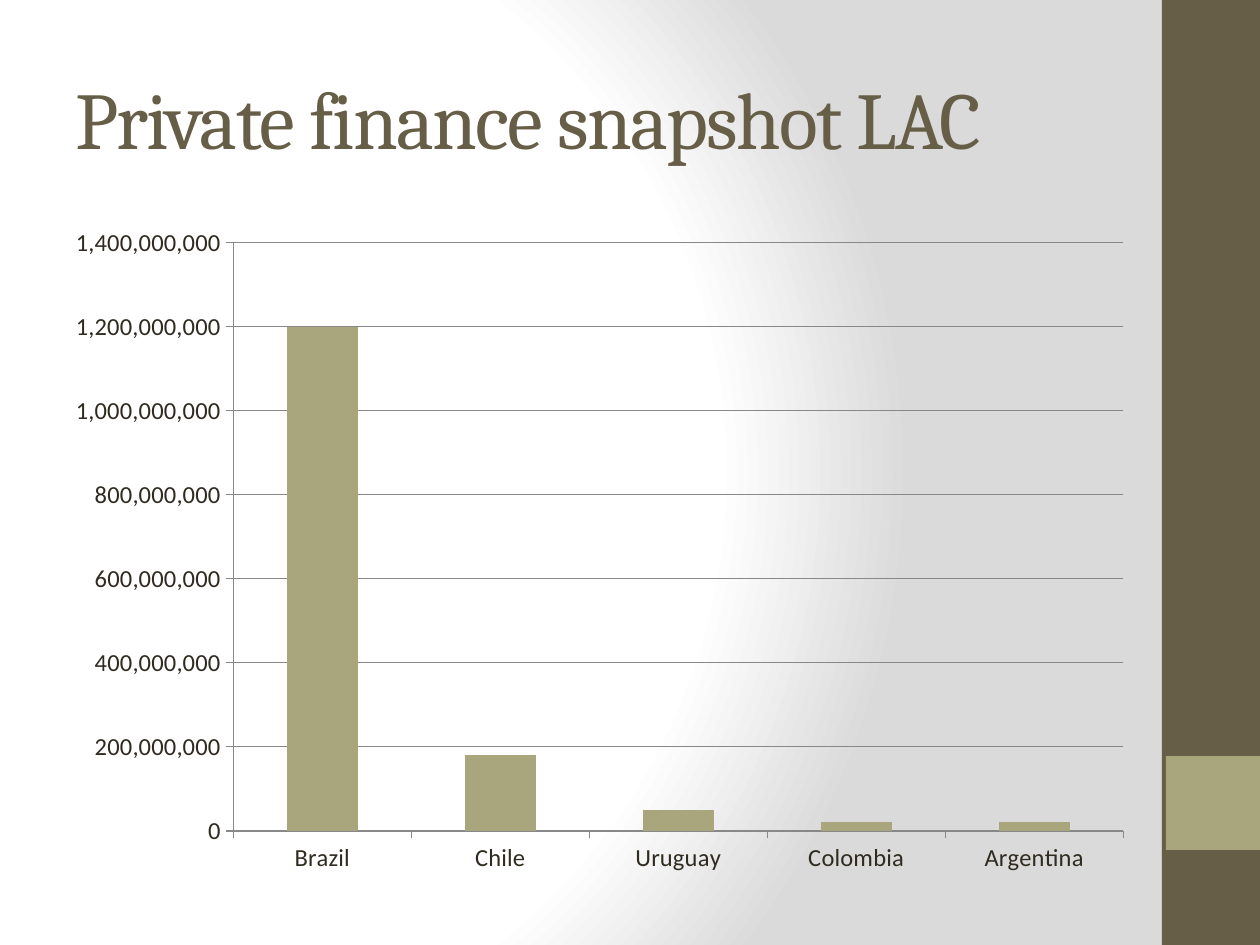
from dataclasses import dataclass

from lxml.etree import SubElement
from pptx import Presentation
from pptx.chart.data import CategoryChartData
from pptx.dml.color import RGBColor
from pptx.enum.chart import XL_CHART_TYPE as ChartType, XL_TICK_MARK as TickMark
from pptx.enum.shapes import MSO_SHAPE as Shape
from pptx.enum.text import MSO_ANCHOR as Anchor
from pptx.oxml.ns import qn
from pptx.util import Emu, Pt


@dataclass(frozen=True)
class Theme:
    ink: str = "2F2B20"
    brown: str = "675E47"
    olive: str = "A9A57C"
    axis: str = "888888"
    white: str = "FFFFFF"
    grey: str = "DADADA"
    heading_font: str = "Cambria"
    body_font: str = "Calibri"
    title_size: int = 46
    label_size: int = 14


def px(length):
    return Emu(round(length * 914400 / 126))


def place(*lengths):
    return [px(length) for length in lengths]


def rgb(code):
    return RGBColor.from_string(code)


class SlideBuilder:
    def __init__(self, page, theme):
        self.page = page
        self.theme = theme

    def radial_background(self, stops, focus):
        self.page.background.fill.solid()
        solid = self.page.element.find(".//" + qn("a:solidFill"))
        parent = solid.getparent()
        gradient = SubElement(parent, qn("a:gradFill"), rotWithShape="1")
        parent.replace(solid, gradient)
        stop_list = SubElement(gradient, qn("a:gsLst"))
        for percent, color in stops:
            stop = SubElement(stop_list, qn("a:gs"), pos=str(percent * 1000))
            SubElement(stop, qn("a:srgbClr"), val=color)
        circle = SubElement(gradient, qn("a:path"), path="circle")
        edges = {side: str(percent * 1000) for side, percent in zip("ltrb", focus)}
        SubElement(circle, qn("a:fillToRect"), **edges)

    def block(self, area, color):
        shape = self.page.shapes.add_shape(Shape.RECTANGLE, *place(*area))
        shape.shadow.inherit = False
        shape.fill.solid()
        shape.fill.fore_color.rgb = rgb(color)
        shape.line.fill.background()

    def title(self, area, text):
        box = self.page.shapes.add_textbox(*place(*area))
        frame = box.text_frame
        frame.word_wrap = True
        frame.vertical_anchor = Anchor.MIDDLE
        para = frame.paragraphs[0]
        span = para.add_run()
        span.text = text
        span.font.name = self.theme.heading_font
        span.font.size = Pt(self.theme.title_size)
        span.font.color.rgb = rgb(self.theme.brown)
        span.font._element.set("spc", "-100")

    def axis_line(self, line):
        line.color.rgb = rgb(self.theme.axis)
        line.width = Pt(0.75)

    def column_chart(self, area, name, values):
        data = CategoryChartData(number_format="General")
        data.categories = list(values)
        data.add_series(name, list(values.values()))
        chart = self.page.shapes.add_chart(
            ChartType.COLUMN_CLUSTERED, *place(*area), data
        ).chart
        chart.has_legend = False
        chart.has_title = False
        chart.font.name = self.theme.body_font
        chart.font.size = Pt(self.theme.label_size)
        chart.font.color.rgb = rgb(self.theme.ink)
        for axis in (chart.category_axis, chart.value_axis):
            axis.major_tick_mark = TickMark.OUTSIDE
            axis.minor_tick_mark = TickMark.NONE
            axis.tick_labels.font.size = Pt(self.theme.label_size)
            self.axis_line(axis.format.line)
        scale = chart.value_axis
        scale.has_major_gridlines = True
        self.axis_line(scale.major_gridlines.format.line)
        scale.tick_labels.number_format = "#,##0"
        scale.tick_labels.number_format_is_linked = False
        plot = chart.plots[0]
        plot.gap_width = 150
        plot.vary_by_categories = False
        fill = plot.series[0].format.fill
        fill.solid()
        fill.fore_color.rgb = rgb(self.theme.olive)


def main():
    deck = Presentation()
    deck.slide_width, deck.slide_height = place(1260, 945)
    theme = Theme()
    slide = SlideBuilder(deck.slides.add_slide(deck.slide_layouts[6]), theme)
    slide.radial_background(
        [(0, theme.white), (75, theme.white), (100, theme.grey)], (20, 50, 100, 50)
    )
    slide.block((1162, 0, 98, 945), theme.brown)
    slide.block((1166, 756, 94, 94), theme.olive)
    finance = {
        "Brazil": 1_200_000_000,
        "Chile": 180_000_000,
        "Uruguay": 50_000_000,
        "Colombia": 20_000_000,
        "Argentina": 20_000_000,
    }
    slide.column_chart((54, 214, 1091, 673), "Series 1", finance)
    slide.title((63, 38, 1050, 158), "Private finance snapshot LAC")
    deck.save("out.pptx")


if __name__ == "__main__":
    main()
